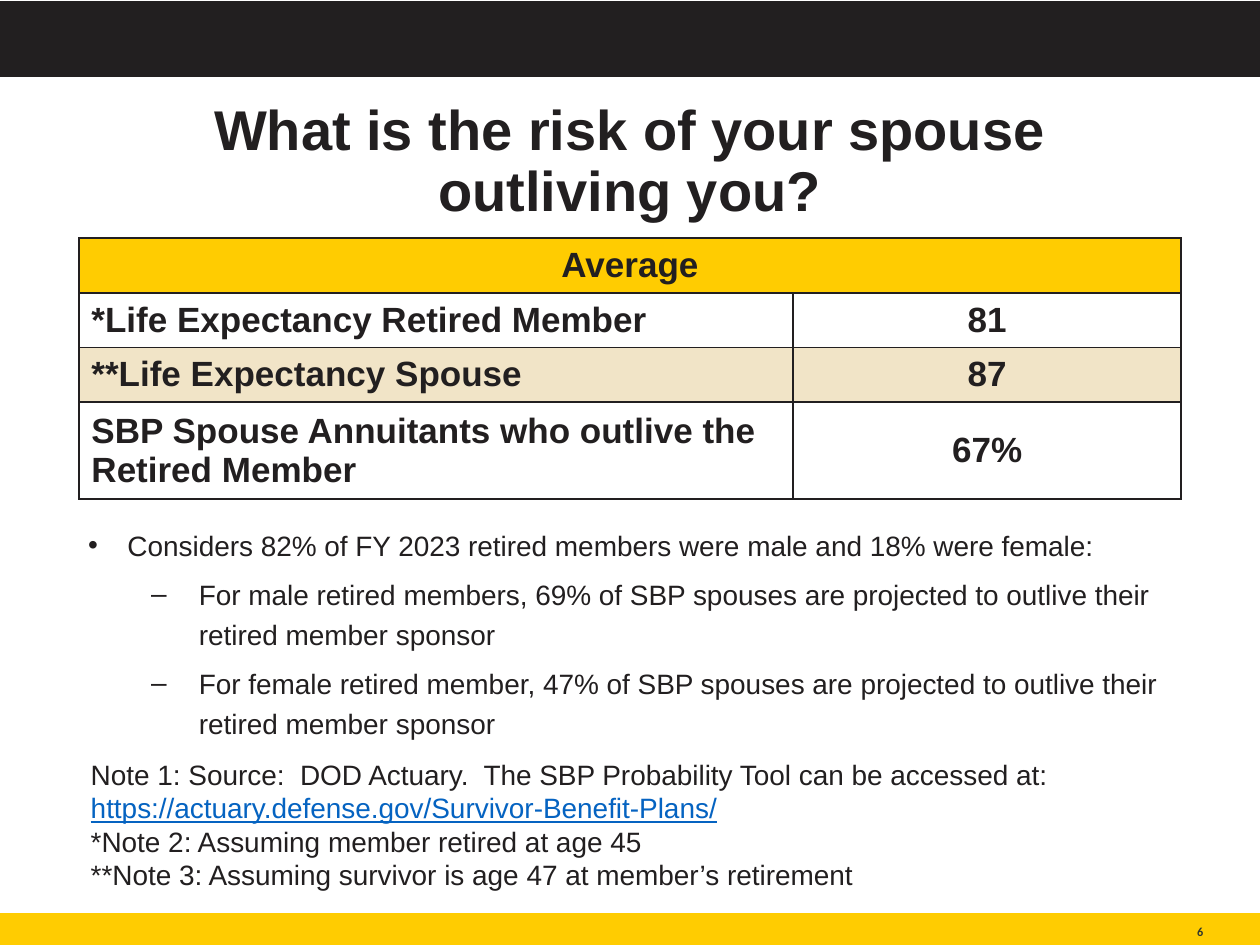
from lxml import etree
from pptx import Presentation
from pptx.dml.color import RGBColor
from pptx.enum.shapes import MSO_SHAPE
from pptx.enum.text import MSO_ANCHOR, PP_ALIGN
from pptx.oxml.ns import qn
from pptx.util import Cm, Pt

BLACK = RGBColor(0x22, 0x1F, 0x20)
GOLD = RGBColor(0xFF, 0xCC, 0x01)
SAND = RGBColor(0xF1, 0xE4, 0xC7)
WHITE = RGBColor(0xFF, 0xFF, 0xFF)
LINK_BLUE = RGBColor(0x05, 0x63, 0xC1)
GREY = RGBColor(0x2F, 0x37, 0x2F)
CENTER, RIGHT = PP_ALIGN.CENTER, PP_ALIGN.RIGHT
MIDDLE, BOTTOM = MSO_ANCHOR.MIDDLE, MSO_ANCHOR.BOTTOM
RECTANGLE = MSO_SHAPE.RECTANGLE


def style(p, size, bold=False, color=BLACK, name="Arial"):
    for r in p.runs:
        r.font.size, r.font.bold, r.font.name = Pt(size), bold, name
        r.font.color.rgb = color


def add_text(left, top, width, height):
    tf = s.shapes.add_textbox(Cm(left), Cm(top), Cm(width), Cm(height)).text_frame
    tf.word_wrap = True
    return tf


prs = Presentation()
prs.slide_width, prs.slide_height = Cm(25.4), Cm(19.05)
s = prs.slides.add_slide(prs.slide_layouts[6])

# Top and bottom bands
for top, height, color in [(0.03, 1.5, BLACK), (18.42, 0.68, GOLD)]:
    band = s.shapes.add_shape(RECTANGLE, 0, Cm(top), prs.slide_width, Cm(height))
    band.shadow.inherit = False
    band.fill.solid()
    band.fill.fore_color.rgb = color
    band.line.color.rgb = color
    band.line.width = Pt(1)

# Slide number
tf = add_text(22.05, 18.42, 2.21, 0.51)
tf.margin_left = tf.margin_right = tf.margin_top = tf.margin_bottom = 0
tf.word_wrap = False
tf.vertical_anchor = BOTTOM
tf.text = "6"
tf.paragraphs[0].alignment = RIGHT
style(tf.paragraphs[0], 7, True, GREY, "Calibri")

# Title
tf = add_text(1.75, 1.88, 21.9, 2.8)
tf.vertical_anchor = MIDDLE
tf.text = "What is the risk of your spouse outliving you?"
p = tf.paragraphs[0]
p.alignment = CENTER
p.line_spacing = 0.9
style(p, 32, True)

# Life expectancy table
rows = [
    ("Average", "", GOLD, 1.1),
    ("*Life Expectancy Retired Member", "81", WHITE, 1.1),
    ("**Life Expectancy Spouse", "87", SAND, 1.1),
    ("SBP Spouse Annuitants who outlive the Retired Member", "67%", WHITE, 1.95),
]
table = s.shapes.add_table(
    len(rows), 2, Cm(1.59), Cm(4.8), Cm(22.22), Cm(5.25)).table
table.columns[0].width, table.columns[1].width = Cm(14.4), Cm(7.82)
table.cell(0, 0).merge(table.cell(0, 1))
for i, (label, value, color, height) in enumerate(rows):
    table.rows[i].height = Cm(height)
    for j, text in enumerate((label, value)):
        cell = table.cell(i, j)
        cell.fill.solid()
        cell.fill.fore_color.rgb = color
        cell.vertical_anchor = MIDDLE
        tcPr = cell._tc.get_or_add_tcPr()
        for k, side in enumerate(("lnL", "lnR", "lnT", "lnB")):
            ln = etree.Element(qn("a:" + side), w=str(Pt(1)))
            fill = etree.SubElement(ln, qn("a:solidFill"))
            etree.SubElement(fill, qn("a:srgbClr"), val=str(BLACK))
            tcPr.insert(k, ln)
        if cell.is_spanned:
            continue
        cell.text_frame.text = text
        p = cell.text_frame.paragraphs[0]
        if i == 0 or j == 1:
            p.alignment = CENTER
        style(p, 20, True)

# Bullets: text, level, bullet, left margin, hanging indent
bullets = [
    ("Considers 82% of FY 2023 retired members were male and 18% were female:",
     0, "•", 0.79, 0.79),
    ("For male retired members, 69% of SBP spouses are projected to outlive "
     "their retired member sponsor", 1, "‒", 2.23, 0.96),
    ("For female retired member, 47% of SBP spouses are projected to outlive "
     "their retired member sponsor", 1, "‒", 2.23, 0.96),
]
tf = add_text(1.53, 10.39, 22.28, 5.49)
for i, (text, level, mark, margin, hanging) in enumerate(bullets):
    p = tf.add_paragraph() if i else tf.paragraphs[0]
    p.text = text
    p.level = level
    p.line_spacing = 1.2
    if i:
        p.space_before = Pt(5)
    pPr = p._p.get_or_add_pPr()
    pPr.set("marL", str(Cm(margin)))
    pPr.set("indent", str(-Cm(hanging)))
    etree.SubElement(pPr, qn("a:buFont"), typeface="Arial")
    etree.SubElement(pPr, qn("a:buChar"), char=mark)
    style(p, 16)

# Notes under the bullets
tf = add_text(1.58, 15.14, 22.28, 3)
tf.text = ("Note 1: Source:  DOD Actuary.  The SBP Probability Tool can be accessed at: \n"
           "*Note 2: Assuming member retired at age 45\n"
           "**Note 3: Assuming survivor is age 47 at member’s retirement")
link = tf.paragraphs[0].add_run()
link.text = "https://actuary.defense.gov/Survivor-Benefit-Plans/"
for p in tf.paragraphs:
    style(p, 16)
link.font.color.rgb = LINK_BLUE
link.font.underline = True

prs.save("out.pptx")
